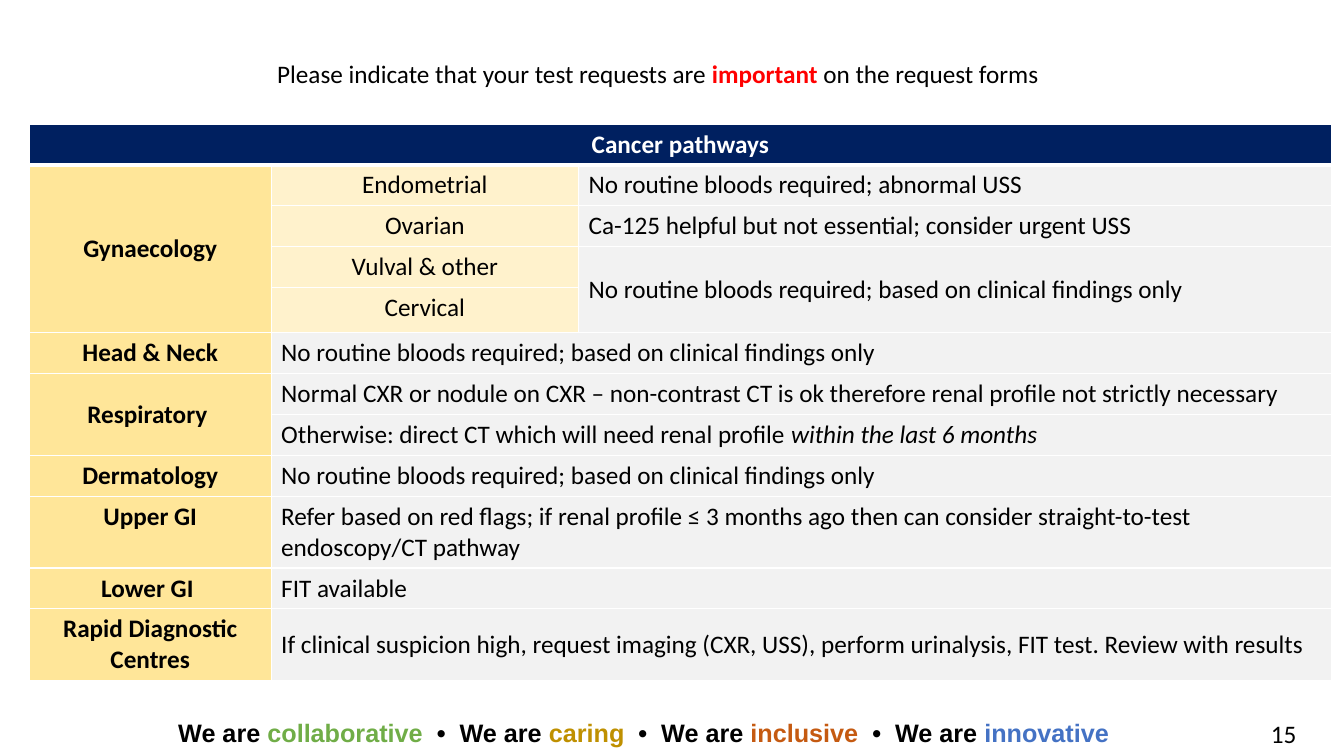
"""Build the cancer pathways slide with its guidance table and values footer."""
from dataclasses import dataclass

from lxml import etree
from pptx import Presentation
from pptx.dml.color import RGBColor
from pptx.enum.text import MSO_ANCHOR, MSO_AUTO_SIZE, PP_ALIGN
from pptx.oxml.ns import qn
from pptx.util import Pt

LEFT, CENTER, RIGHT = PP_ALIGN.LEFT, PP_ALIGN.CENTER, PP_ALIGN.RIGHT
TOP, MIDDLE = MSO_ANCHOR.TOP, MSO_ANCHOR.MIDDLE
NO_AUTO_SIZE = MSO_AUTO_SIZE.NONE


@dataclass(frozen=True)
class Theme:
    body_font: str = "Calibri"
    footer_font: str = "Arial"
    size: float = 18
    black: str = "000000"
    white: str = "FFFFFF"
    red: str = "FF0000"
    navy: str = "002060"
    gold: str = "FFE699"
    cream: str = "FFF2CC"
    grey: str = "F2F2F2"
    green: str = "70AD47"
    ochre: str = "BF9000"
    rust: str = "C55A11"
    blue: str = "4472C4"


THEME = Theme()


@dataclass(frozen=True)
class Span:
    text: str
    color: str = THEME.black
    bold: bool = False
    italic: bool = False
    font: str = THEME.body_font


@dataclass(frozen=True)
class Entry:
    row: int
    column: int
    spans: tuple[Span, ...]
    fill: str
    align: PP_ALIGN = LEFT
    anchor: MSO_ANCHOR = TOP
    rows: int = 1
    columns: int = 1


def pathway(row: int, name: str, rows: int = 1) -> Entry:
    return Entry(row, 0, (Span(name, bold=True),), THEME.gold, CENTER,
                 MIDDLE if rows > 1 else TOP, rows)


def site(row: int, name: str) -> Entry:
    return Entry(row, 1, (Span(name),), THEME.cream, CENTER)


def site_advice(row: int, text: str, rows: int = 1) -> Entry:
    return Entry(row, 2, (Span(text),), THEME.grey, rows=rows,
                 anchor=MIDDLE if rows > 1 else TOP)


def advice(row: int, *spans: Span, anchor: MSO_ANCHOR = TOP) -> Entry:
    return Entry(row, 1, spans, THEME.grey, anchor=anchor, columns=2)


CLINICAL_ONLY = "No routine bloods required; based on clinical findings only"
ENTRIES = (
    Entry(0, 0, (Span("Cancer pathways", THEME.white, True),), THEME.navy, CENTER, columns=3),
    pathway(1, "Gynaecology", 4),
    site(1, "Endometrial"),
    site_advice(1, "No routine bloods required; abnormal USS"),
    site(2, "Ovarian"),
    site_advice(2, "Ca-125 helpful but not essential; consider urgent USS"),
    site(3, "Vulval & other"),
    site_advice(3, CLINICAL_ONLY, 2),
    site(4, "Cervical"),
    pathway(5, "Head & Neck"),
    advice(5, Span(CLINICAL_ONLY)),
    pathway(6, "Respiratory ", 2),
    advice(6, Span("Normal CXR or nodule on CXR – non-contrast CT is ok "
                   "therefore renal profile not strictly necessary")),
    advice(7, Span("Otherwise: direct CT which will need renal profile "),
           Span("within the last 6 months", italic=True)),
    pathway(8, "Dermatology"),
    advice(8, Span(CLINICAL_ONLY)),
    pathway(9, "Upper GI"),
    advice(9, Span("Refer based on red flags; if renal profile ≤ 3 months ago "
                   "then can consider straight-to-test endoscopy/CT pathway")),
    pathway(10, "Lower GI "),
    advice(10, Span("FIT available")),
    pathway(11, "Rapid Diagnostic Centres"),
    advice(11, Span("If clinical suspicion high, request imaging (CXR, USS), "
                    "perform urinalysis, FIT test. Review with results"), anchor=MIDDLE),
)
COLUMN_WIDTHS = (172.8, 219.6, 537.84)
LINE_HEIGHT, CERVICAL_HEIGHT, TWO_LINE_HEIGHT = 28.8, 32.4, 50.4
ROW_HEIGHTS = (*[LINE_HEIGHT] * 4, CERVICAL_HEIGHT, *[LINE_HEIGHT] * 4,
               TWO_LINE_HEIGHT, LINE_HEIGHT, TWO_LINE_HEIGHT)
VALUES = (("collaborative", THEME.green), ("caring", THEME.ochre),
          ("inclusive", THEME.rust), ("innovative", THEME.blue))


def write(frame, spans: tuple[Span, ...], align: PP_ALIGN) -> None:
    para = frame.paragraphs[0]
    para.alignment = align
    for span in spans:
        run = para.add_run()
        run.text = span.text
        run.font.name = span.font
        run.font.size = Pt(THEME.size)
        run.font.bold = span.bold
        run.font.italic = span.italic
        run.font.color.rgb = RGBColor.from_string(span.color)


def fill_box(box, left: float, top: float, width: float, height: float,
             spans: tuple[Span, ...], align: PP_ALIGN = LEFT) -> None:
    box.left, box.top, box.width, box.height = Pt(left), Pt(top), Pt(width), Pt(height)
    frame = box.text_frame
    frame.word_wrap = True
    frame.auto_size = NO_AUTO_SIZE
    frame.vertical_anchor = TOP
    write(frame, spans, align)


def add_text(page, left: float, top: float, width: float, height: float,
             spans: tuple[Span, ...], align: PP_ALIGN = LEFT) -> None:
    box = page.shapes.add_textbox(0, 0, Pt(width), Pt(height))
    fill_box(box, left, top, width, height, spans, align)


def draw_borders(cell, row: int) -> None:
    widths = {"a:lnL": 1, "a:lnR": 1, "a:lnT": 3 if row == 1 else 1,
              "a:lnB": 3 if row == 0 else 1}
    properties = cell._tc.get_or_add_tcPr()
    for tag, width in widths.items():
        line = etree.SubElement(properties, qn(tag), w=str(Pt(width)))
        solid = etree.SubElement(line, qn("a:solidFill"))
        etree.SubElement(solid, qn("a:srgbClr"), val=THEME.white)


def add_pathway_table(page) -> None:
    table = page.shapes.add_table(
        len(ROW_HEIGHTS), len(COLUMN_WIDTHS), Pt(20.88), Pt(88.56),
        Pt(sum(COLUMN_WIDTHS)), Pt(sum(ROW_HEIGHTS))).table
    table.first_row = table.horz_banding = False
    for column, width in zip(table.columns, COLUMN_WIDTHS):
        column.width = Pt(width)
    for row, height in zip(table.rows, ROW_HEIGHTS):
        row.height = Pt(height)
    for entry in ENTRIES:
        for row in range(entry.row, entry.row + entry.rows):
            for column in range(entry.column, entry.column + entry.columns):
                cell = table.cell(row, column)
                draw_borders(cell, row)
                cell.fill.solid()
                cell.fill.fore_color.rgb = RGBColor.from_string(entry.fill)
        cell = table.cell(entry.row, entry.column)
        if entry.rows > 1 or entry.columns > 1:
            cell.merge(table.cell(entry.row + entry.rows - 1,
                                  entry.column + entry.columns - 1))
        cell.vertical_anchor = entry.anchor
        write(cell.text_frame, entry.spans, entry.align)


def footer_spans() -> tuple[Span, ...]:
    spans = []
    for index, (value, color) in enumerate(VALUES):
        lead = "  •  We are " if index else "We are "
        spans += [Span(lead, bold=True, font=THEME.footer_font),
                  Span(value, color, True, font=THEME.footer_font)]
    return tuple(spans)


def main() -> None:
    deck = Presentation()
    deck.slide_width, deck.slide_height = Pt(960), Pt(540)
    page = deck.slides.add_slide(deck.slide_layouts.get_by_name("Title Only"))
    fill_box(page.shapes.title, 190.8, 38.16, 560.88, 28.8, (
        Span("Please indicate that your test requests are "),
        Span("important", THEME.red, True),
        Span(" on the request forms")))
    add_pathway_table(page)
    add_text(page, 120.24, 509.04, 720, 28.8, footer_spans())
    add_text(page, 799.92, 509.76, 133.2, 28.8, (Span("15"),), RIGHT)
    deck.save("out.pptx")


if __name__ == "__main__":
    main()
